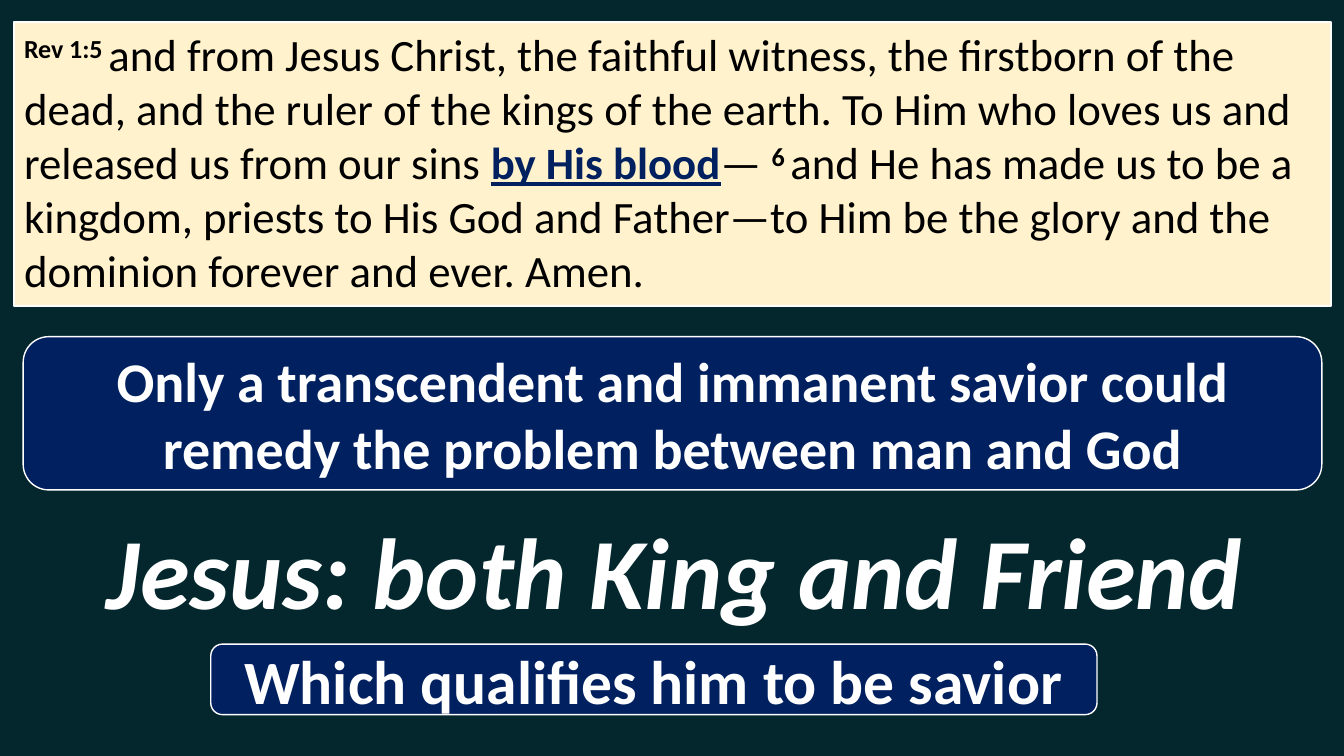
import dataclasses

import pptx
import pptx.dml.color
import pptx.enum.shapes
import pptx.enum.text
import pptx.util

EMU_PER_PX = 9144  # 100 px to the inch
FONT = "Calibri"
WHITE, BLACK, NAVY, CREAM, TEAL = "FFFFFF", "000000", "002060", "FFF2CC", "03272D"

RECT = pptx.enum.shapes.MSO_SHAPE.RECTANGLE
ROUNDED = pptx.enum.shapes.MSO_SHAPE.ROUNDED_RECTANGLE
LEFT = pptx.enum.text.PP_ALIGN.LEFT
CENTER = pptx.enum.text.PP_ALIGN.CENTER
TOP = pptx.enum.text.MSO_ANCHOR.TOP
MIDDLE = pptx.enum.text.MSO_ANCHOR.MIDDLE


@dataclasses.dataclass(frozen=True)
class Span:
    text: str
    color: str = WHITE
    bold: bool = True
    italic: bool = False
    underline: bool = False
    raised: bool = False


@dataclasses.dataclass(frozen=True)
class Panel:
    left: int
    top: int
    width: int
    height: int
    size: int
    spans: tuple[Span, ...]
    fill: str | None = NAVY
    line_width: float = 1
    outline: pptx.enum.shapes.MSO_SHAPE = ROUNDED
    align: pptx.enum.text.PP_ALIGN = CENTER
    anchor: pptx.enum.text.MSO_ANCHOR = MIDDLE


def px(length: int) -> pptx.util.Emu:
    return pptx.util.Emu(length * EMU_PER_PX)


def rgb(color: str) -> pptx.dml.color.RGBColor:
    return pptx.dml.color.RGBColor.from_string(color)


def add_span(para, span: Span, size: int) -> None:
    run = para.add_run()
    run.text = span.text
    run.font.name = FONT
    run.font.size = pptx.util.Pt(size)
    run.font.color.rgb = rgb(span.color)
    run.font.bold = span.bold
    run.font.italic = span.italic
    run.font.underline = span.underline
    if span.raised:
        run._r.get_or_add_rPr().set("baseline", "30000")


def add_panel(page, panel: Panel) -> None:
    box = page.shapes.add_shape(
        panel.outline, px(panel.left), px(panel.top), px(panel.width), px(panel.height)
    )
    box.shadow.inherit = False
    if panel.fill is None:
        box.fill.background()
        box.line.fill.background()
    else:
        box.fill.solid()
        box.fill.fore_color.rgb = rgb(panel.fill)
        box.line.color.rgb = rgb(WHITE)
        box.line.width = pptx.util.Pt(panel.line_width)
    frame = box.text_frame
    frame.word_wrap = True
    frame.vertical_anchor = panel.anchor
    para = frame.paragraphs[0]
    para.alignment = panel.align
    for span in panel.spans:
        add_span(para, span, panel.size)


# Scripture passage, with raised verse numbers
PASSAGE = (
    Span("Rev 1:5 ", BLACK, raised=True),
    Span(
        "and from Jesus Christ, the faithful witness, the firstborn of the dead, "
        "and the ruler of the kings of the earth. To Him who loves us and "
        "released us from our sins ",
        BLACK,
        bold=False,
    ),
    Span("by His blood", NAVY, underline=True),
    Span("— ", BLACK, bold=False),
    Span("6 ", BLACK, raised=True),
    Span(
        "and He has made us to be a kingdom, priests to His God and Father—to Him "
        "be the glory and the dominion forever and ever. Amen.",
        BLACK,
        bold=False,
    ),
)

# Panels from back to front
PANELS = (
    Panel(32, 500, 1275, 129, 72, (Span("Jesus: both King and Friend", italic=True),), fill=None),
    Panel(209, 639, 879, 70, 44, (Span("Which qualifies him to be savior"),)),
    Panel(14, 22, 1306, 282, 32, PASSAGE, CREAM, 1.5, RECT, LEFT, TOP),
    Panel(
        23, 334, 1288, 152, 40,
        (Span("Only a transcendent and immanent savior could remedy the problem between man and God"),),
    ),
)


def main() -> None:
    deck = pptx.Presentation()
    deck.slide_width, deck.slide_height = px(1333), px(750)
    page = deck.slides.add_slide(deck.slide_layouts[6])
    page.background.fill.solid()
    page.background.fill.fore_color.rgb = rgb(TEAL)
    for panel in PANELS:
        add_panel(page, panel)
    deck.save("out.pptx")


if __name__ == "__main__":
    main()
